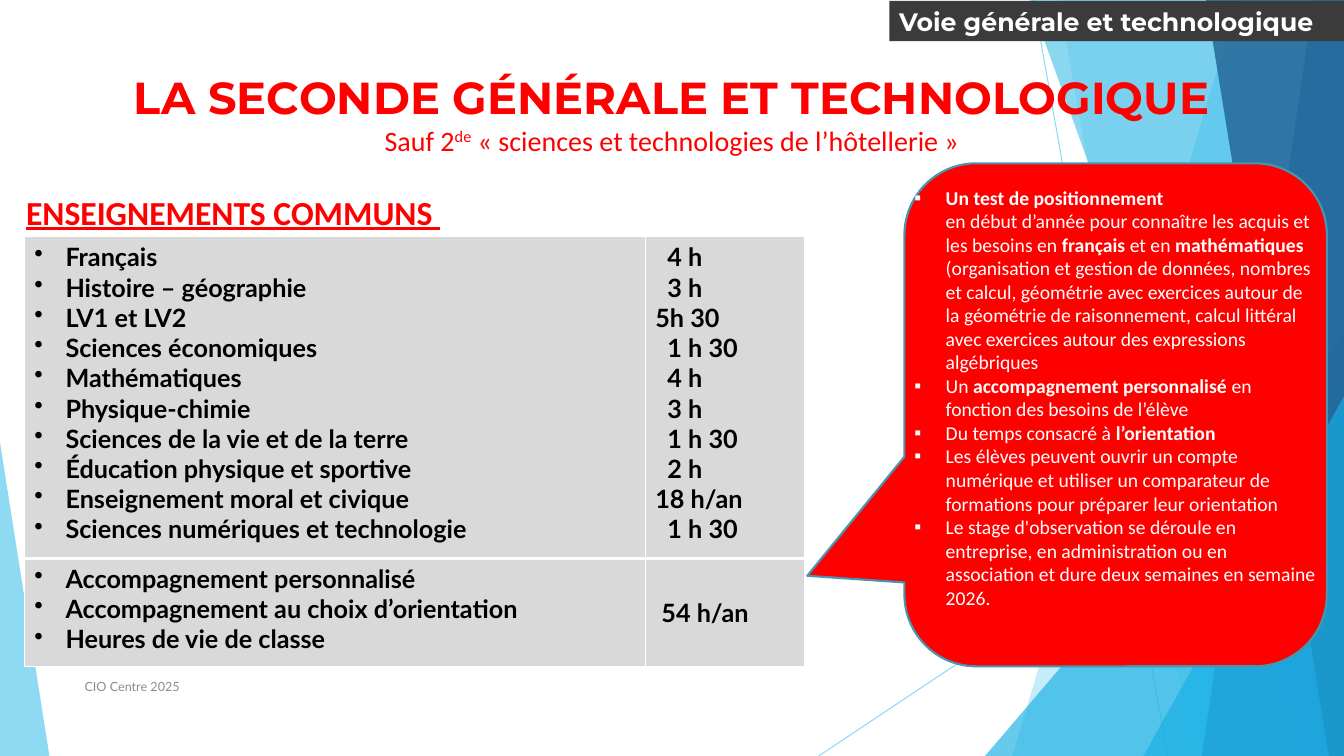
from pptx import Presentation
from pptx.dml.color import RGBColor
from pptx.enum.shapes import MSO_CONNECTOR, MSO_SHAPE
from pptx.enum.text import MSO_ANCHOR, MSO_AUTO_SIZE, PP_ALIGN
from pptx.oxml.ns import qn
from pptx.util import Inches, Pt
from lxml import etree

RECT = MSO_SHAPE.RECTANGLE
TRI = MSO_SHAPE.ISOSCELES_TRIANGLE
CALL = MSO_SHAPE.ROUNDED_RECTANGULAR_CALLOUT
LINE = MSO_CONNECTOR.STRAIGHT
TOP, MID = MSO_ANCHOR.TOP, MSO_ANCHOR.MIDDLE
LEFT, CENTER = PP_ALIGN.LEFT, PP_ALIGN.CENTER
FIXED = MSO_AUTO_SIZE.NONE

HUES = {
    "sky": "5FCBEF", "cyan": "17B0E4", "blue": "2E83C3", "navy": "226292",
    "edge": "4696B1", "red": "FF0000", "dark": "3B3B3B", "gray": "D9D9D9",
    "mute": "8C8C8C", "white": "FFFFFF", "black": "000000",
}

RAYS = [((10.25, 0), (11.58, 7.5)), ((13.33, 4.03), (8.12, 7.5))]
BANDS = [
    (12.28, 10.04, "sky", 36), (10.5, 11.83, "sky", 20),
    (10.21, 12.91, "cyan", 50), (13.03, 11.92, "blue", 70),
    (11.96, 13.18, "navy", 80),
]
PEAKS = [
    ((9.77, 3.33, 3.56, 4.17), 1, "cyan", 66),
    ((11.34, 3.93, 1.99, 3.57), 1, "cyan", 66),
    ((0, 4.39, 0.49, 3.11), 0, "sky", 70),
]
COURSES = [
    ("Français", "4 h"), ("Histoire – géographie", "3 h"),
    ("LV1 et LV2", "5h 30"), ("Sciences économiques", "1 h 30"),
    ("Mathématiques", "4 h"), ("Physique-chimie", "3 h"),
    ("Sciences de la vie et de la terre", "1 h 30"),
    ("Éducation physique et sportive", "2 h"),
    ("Enseignement moral et civique", "18 h/an"),
    ("Sciences numériques et technologie", "1 h 30"),
]
FLUSH = ("5h 30", "18 h/an")
SUPPORT = ["Accompagnement personnalisé",
           "Accompagnement au choix d’orientation", "Heures de vie de classe"]
NOTES = [
    [("Un test de positionnement\n", True),
     ("en début d’année pour connaître les acquis et les besoins en ", False),
     ("français ", True), ("et en ", False), ("mathématiques", True),
     (" (organisation et gestion de données, nombres\net calcul, "
      "géométrie avec exercices autour de la géométrie de raisonnement, "
      "calcul littéral avec exercices autour des expressions algébriques",
      False)],
    [("Un ", False), ("accompagnement personnalisé ", True),
     ("en fonction des besoins de l’élève", False)],
    [("Du temps consacré à ", False), ("l’orientation", True)],
    [("Les élèves peuvent ouvrir un compte numérique et utiliser un "
      "comparateur de formations pour préparer leur orientation", False)],
    [("Le stage d'observation se déroule en entreprise, en administration "
      "ou en association et dure deux semaines en semaine 2026.", False)],
]


def hue(name):
    return RGBColor.from_string(HUES[name])


def inches(nums):
    return [Inches(n) for n in nums]


def fade(item, share):
    tint = next(item._element.spPr.iter(qn("a:srgbClr")))
    etree.SubElement(tint, qn("a:alpha"), val=str(share * 1000))


def paint(shape, fill):
    shape.shadow.inherit = False
    shape.fill.solid()
    shape.fill.fore_color.rgb = hue(fill)
    shape.line.fill.background()


def style(para, face, size, color, bold=None, align=LEFT):
    para.alignment = align
    para.space_before = Pt(0)
    font = para.font
    font.name, font.size, font.bold = face, Pt(size), bold
    font.color.rgb = hue(color)


def indent(para, left, mark=None):
    props = para._p.get_or_add_pPr()
    props.set("marL", str(Inches(left)))
    props.set("indent", str(-Inches(left) if mark else 0))
    if mark:
        etree.SubElement(props, qn("a:buChar"), char=mark)


def paras(frame, count):
    while len(frame.paragraphs) < count:
        frame.add_paragraph()
    return frame.paragraphs


def add_ray(shapes, start, end):
    ray = shapes.add_connector(LINE, *inches(start + end))
    ray.line.color.rgb = hue("sky")
    ray.line.width = Pt(0.75)
    fade(ray, 70)
    etree.SubElement(ray._element.spPr, qn("a:effectLst"))


def add_band(shapes, top, base, color, share):
    pen = shapes.build_freeform(Inches(top), Inches(-0.01))
    ends = [(13.33, -0.01), (13.33, 7.5), (base, 7.5)]
    pen.add_line_segments([inches(end) for end in ends])
    band = pen.convert_to_shape()
    paint(band, color)
    fade(band, share)


def add_peak(shapes, area, tip, color, share):
    peak = shapes.add_shape(TRI, *inches(area))
    peak.adjustments[0] = tip
    paint(peak, color)
    fade(peak, share)


def add_label(shapes, area, text, look, wrap=True, anchor=TOP):
    box = shapes.add_textbox(*inches(area))
    frame = box.text_frame
    frame.word_wrap, frame.vertical_anchor = wrap, anchor
    para = frame.paragraphs[0]
    para.text = text
    style(para, *look)
    return box


def place(shapes, holder, area):
    shapes._spTree.append(holder._element)
    holder.left, holder.top, holder.width, holder.height = inches(area)
    frame = holder.text_frame
    frame.word_wrap, frame.auto_size = True, FIXED
    frame.vertical_anchor = TOP
    return frame


def add_notes(shapes, holder):
    bubble = shapes.add_shape(CALL, *inches((8.97, 1.62, 4.19, 4.99)))
    paint(bubble, "red")
    bubble.line.color.rgb = hue("edge")
    bubble.line.width = Pt(1.5)
    for spot, value in enumerate((-0.728, 0.324, 0.167)):
        bubble.adjustments[spot] = round(value, 2)
    frame = place(shapes, holder, (8.97, 1.79, 4.19, 4.34))
    for para, parts in zip(paras(frame, len(NOTES)), NOTES):
        indent(para, 0.31, "▪")
        style(para, "Calibri", 14, "white")
        for text, bold in parts:
            for turn, piece in enumerate(text.split("\n")):
                if turn:
                    para.add_line_break()
                if piece:
                    run = para.add_run()
                    run.text, run.font.bold = piece, bold


def fill_cell(cell, rows, sides):
    props = cell._tc.get_or_add_tcPr()
    for side, width in zip("LRTB", sides):
        edge = etree.SubElement(props, qn("a:ln" + side), w=str(Pt(width)))
        solid = etree.SubElement(edge, qn("a:solidFill"))
        etree.SubElement(solid, qn("a:srgbClr"), val=HUES["white"])
    cell.fill.solid()
    cell.fill.fore_color.rgb = hue("gray")
    for para, (text, left, mark) in zip(paras(cell.text_frame, len(rows)), rows):
        para.text = text
        indent(para, left, mark)
        style(para, "Lato", 18, "black", True)


def add_hours(shapes):
    table = shapes.add_table(2, 2, *inches((0.24, 2.35, 7.74, 4.26))).table
    table.first_row = table.horz_banding = False
    for col, width in zip(table.columns, (6.16, 1.58)):
        col.width = Inches(width)
    for row, height in zip(table.rows, (3.19, 1.07)):
        row.height = Inches(height)
    names = [(name, 0.31, "•") for name, _ in COURSES]
    hours = [(time, 0 if time in FLUSH else 0.12, None) for _, time in COURSES]
    extra = [(name, 0.31, "•") for name in SUPPORT]
    grid = [[names, hours], [extra, [("54 h/an", 0.06, None)]]]
    for r, (line, base) in enumerate(zip(grid, (3, 1))):
        for c, rows in enumerate(line):
            fill_cell(table.cell(r, c), rows, (1, 1, 3 if r else 1, base))
    table.cell(1, 1).vertical_anchor = MID


def add_title(shapes, holder):
    frame = place(shapes, holder, (0.85, 0.64, 11.63, 0.98))
    head, sub = paras(frame, 2)
    head.text = "LA SECONDE GÉNÉRALE ET TECHNOLOGIQUE"
    style(head, "Montserrat", 32, "red", True, CENTER)
    style(sub, "Calibri", 20, "red", False, CENTER)
    for text in ("Sauf 2", "de", " « sciences et technologies de l’hôtellerie »"):
        run = sub.add_run()
        run.text = text
        if text == "de":
            run._r.get_or_add_rPr().set("baseline", "30000")


def main():
    deck = Presentation()
    deck.slide_width, deck.slide_height = inches((13.33, 7.5))
    slide = deck.slides.add_slide(deck.slide_layouts[1])
    shapes = slide.shapes
    title, body = slide.placeholders
    for ray in RAYS:
        add_ray(shapes, *ray)
    for band in BANDS[:2]:
        add_band(shapes, *band)
    add_peak(shapes, *PEAKS[0])
    for band in BANDS[2:]:
        add_band(shapes, *band)
    for peak in PEAKS[1:]:
        add_peak(shapes, *peak)
    add_notes(shapes, body)
    add_hours(shapes)
    add_title(shapes, title)
    tag = add_label(shapes, (8.82, 0.01, 4.51, 0.4),
                    "Voie générale et technologique",
                    ("Montserrat", 18, "white", True))
    tag.fill.solid()
    tag.fill.fore_color.rgb = hue("dark")
    head = add_label(shapes, (0.16, 1.85, 4.35, 0.5), "ENSEIGNEMENTS COMMUNS ",
                     ("Calibri", 24, "red", True), False)
    head.text_frame.paragraphs[0].font.underline = True
    add_label(shapes, (0.74, 6.61, 6.89, 0.4), "CIO Centre 2025",
              ("Lato", 9, "mute"), anchor=MID)
    deck.save("out.pptx")


if __name__ == "__main__":
    main()
